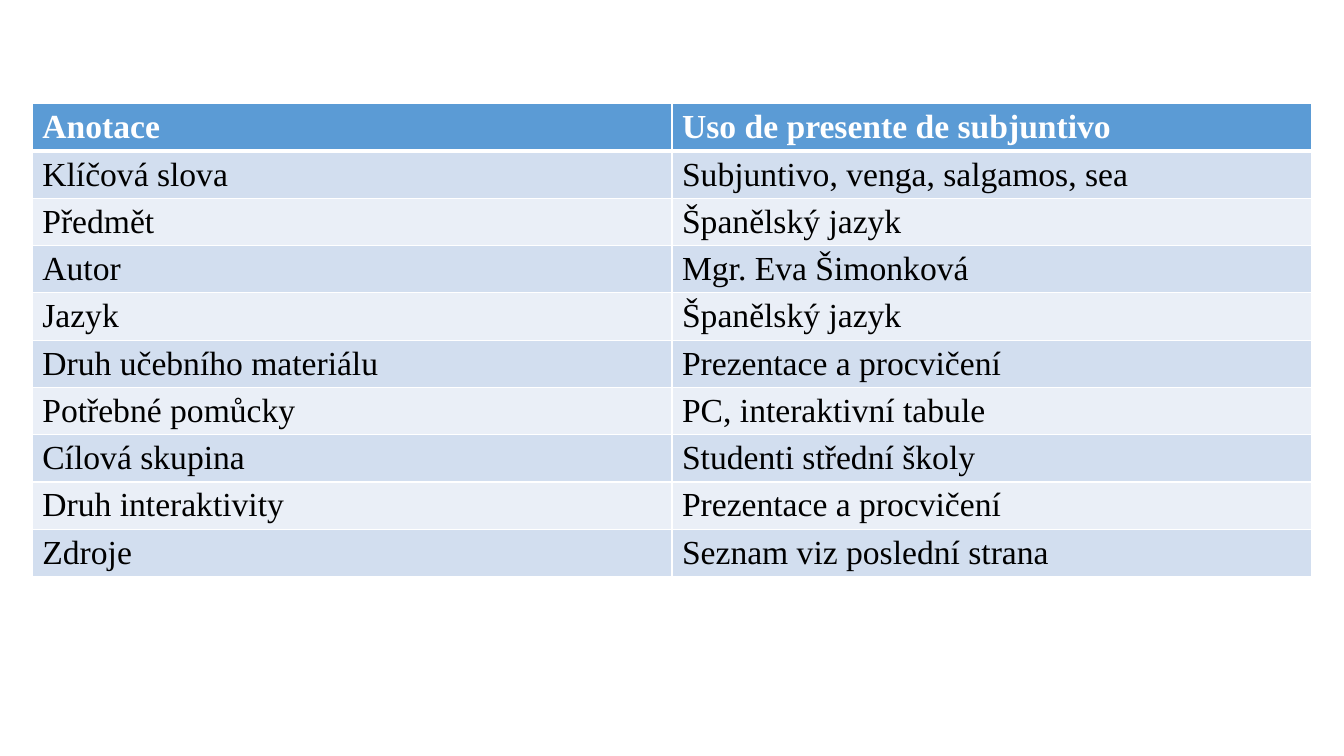
from lxml import etree
from pptx import Presentation
from pptx.dml.color import RGBColor
from pptx.oxml import ns
from pptx.util import Inches, Pt

COLORS = {
    "header": "5B9BD5",
    "odd": "D2DEEF",
    "even": "EAEFF7",
    "border": "FFFFFF",
    "header_text": "FFFFFF",
    "body_text": "000000",
}
ROWS = [
    ("Anotace", "Uso de presente de subjuntivo"),
    ("Klíčová slova", "Subjuntivo, venga, salgamos, sea"),
    ("Předmět", "Španělský jazyk"),
    ("Autor", "Mgr. Eva Šimonková"),
    ("Jazyk", "Španělský jazyk"),
    ("Druh učebního materiálu", "Prezentace a procvičení"),
    ("Potřebné pomůcky", "PC, interaktivní tabule"),
    ("Cílová skupina", "Studenti střední školy"),
    ("Druh interaktivity", "Prezentace a procvičení"),
    ("Zdroje", "Seznam viz poslední strana"),
]


def add_border(cell, side, points):
    properties = cell._tc.get_or_add_tcPr()
    line = etree.SubElement(properties, ns.qn(f"a:ln{side}"), w=str(Pt(points)))
    fill = etree.SubElement(line, ns.qn("a:solidFill"))
    etree.SubElement(fill, ns.qn("a:srgbClr"), val=COLORS["border"])


deck = Presentation()
deck.slide_width, deck.slide_height = Inches(13.33), Inches(7.5)
page = deck.slides.add_slide(deck.slide_layouts[6])

frame = page.shapes.add_table(
    len(ROWS), 2, Inches(0.32), Inches(1.03), Inches(12.69), Inches(5)
)
table = frame.table
for row in table.rows:
    row.height = Inches(0.41)
frame.height = Inches(5)

for row_index, labels in enumerate(ROWS):
    is_header = row_index == 0
    band = "header" if is_header else ("even", "odd")[row_index % 2]
    text_color = COLORS["header_text" if is_header else "body_text"]
    # The rule under the header is shared by the first two rows.
    borders = {
        "L": 1,
        "R": 1,
        "T": 3 if row_index == 1 else 1,
        "B": 3 if is_header else 1,
    }
    font_format = {"name": "Times New Roman", "size": Pt(24), "bold": is_header}
    for column_index, label in enumerate(labels):
        cell = table.cell(row_index, column_index)
        for side, points in borders.items():
            add_border(cell, side, points)
        cell.fill.solid()
        cell.fill.fore_color.rgb = RGBColor.from_string(COLORS[band])
        span = cell.text_frame.paragraphs[0].add_run()
        span.text = label
        for name, value in font_format.items():
            setattr(span.font, name, value)
        span.font.color.rgb = RGBColor.from_string(text_color)

deck.save("out.pptx")
